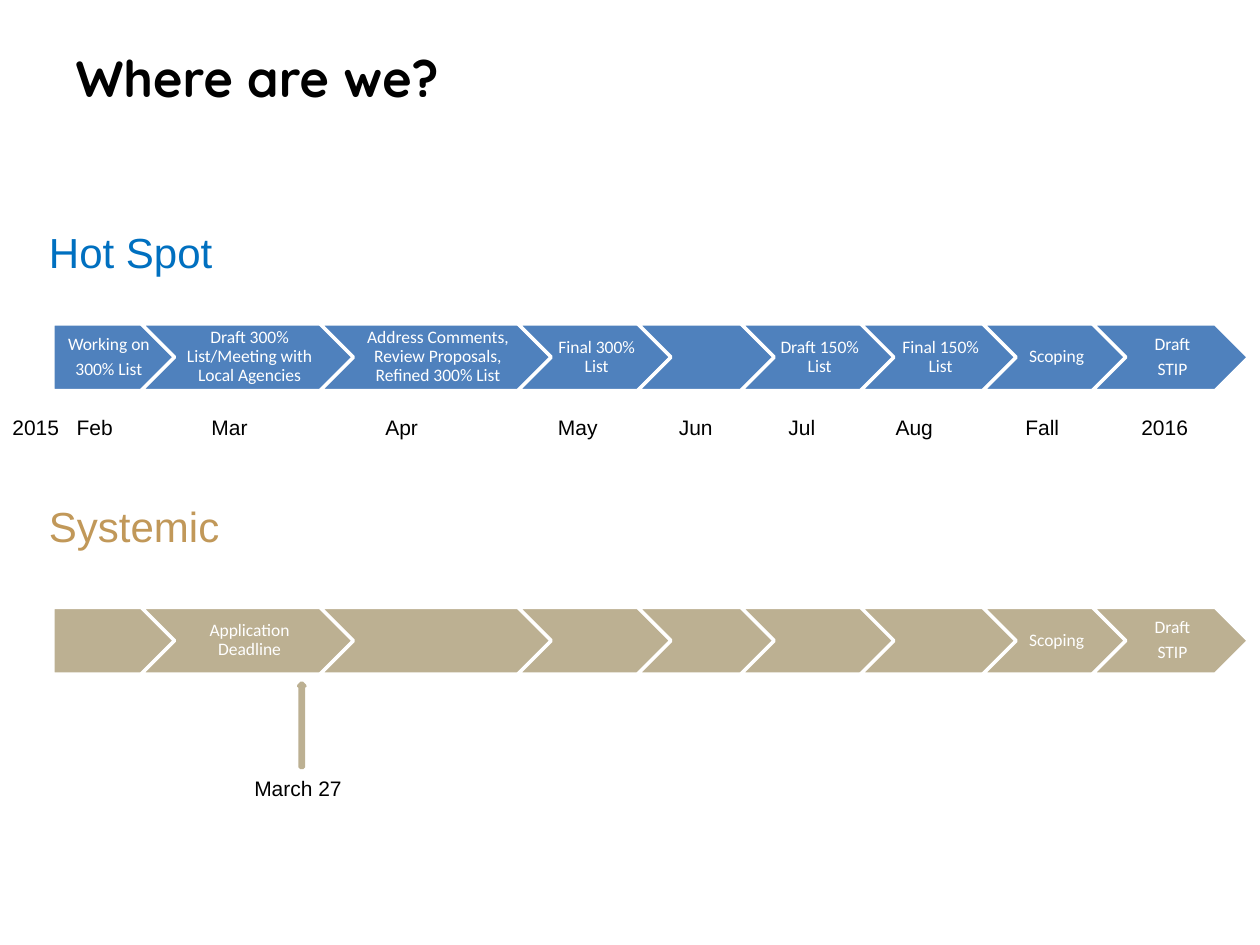
"""Build a project timeline slide with one chevron row per programme."""
from lxml import etree
from pptx import Presentation
from pptx import util as u
from pptx.dml import color
from pptx.enum import shapes, text
from pptx.oxml import ns

TITLE = "Where are we?"
PROGRAMMES = [
    {"name": "Hot Spot", "heading": "0070C0", "fill": "4F81BD", "heading_top": 1.75, "top": 2.57,
     "steps": ["Working on\n300% List", "Draft 300% List/Meeting with Local Agencies",
               "Address Comments, Review Proposals, Refined 300% List", "Final 300% List", "",
               "Draft 150% List", "Final 150% List", "Scoping", "Draft\nSTIP"]},
    {"name": "Systemic", "heading": "C19859", "fill": "BCB092", "heading_top": 3.92, "top": 4.82,
     "steps": ["", "Application Deadline", "", "", "", "", "", "Scoping", "Draft\nSTIP"]},
]
START_YEAR = "2015"
MONTHS = ["Feb", "Mar", "Apr", "May", "Jun", "Jul", "Aug", "Fall", "2016"]
MONTH_TABS = [1.07, 2.45, 3.82, 4.78, 5.65, 6.5, 7.53, 8.45]
DEADLINE = "March 27"

STEP_WIDTHS = [0.97, 1.69, 1.84, 1.22, 1.09, 1.22, 1.24, 1.14, 1.24]
ROW_LEFT, STEP_HEIGHT, OVERLAP = 0.42, 0.53, 0.27
MONTH_TOP = 3.24

THEME = {
    "title": ("Quicksand", 29, "000000"),
    "heading": ("Arial", 24),
    "label": ("Arial", 12, "000000"),
    "step": ("Calibri", 10, "FFFFFF"),
    "outline": "FFFFFF",
    "marker": "BCB092",
    "line": 2,
}


def style_font(font, name, size, rgb):
    font.name, font.size = name, u.Pt(size)
    font.color.rgb = color.RGBColor.from_string(rgb)


def add_label(slide, content, left, top, width, height, style, tabs=()):
    frame = slide.shapes.add_textbox(*map(u.Inches, (left, top, width, height))).text_frame
    frame.word_wrap = True
    frame.text = content
    paragraph = frame.paragraphs[0]
    if tabs:
        tab_list = etree.SubElement(paragraph._p.get_or_add_pPr(), ns.qn("a:tabLst"))
        for position in tabs:
            etree.SubElement(tab_list, ns.qn("a:tab"), pos=str(u.Inches(position)), algn="l")
    for run in paragraph.runs:
        style_font(run.font, *style)


def add_block(parent, kind, left, top, width, height, fill, outline):
    shape = parent.shapes.add_shape(kind, *map(u.Inches, (left, top, width, height)))
    shape.shadow.inherit = False
    shape.fill.solid()
    shape.fill.fore_color.rgb = color.RGBColor.from_string(fill)
    shape.line.color.rgb = color.RGBColor.from_string(outline)
    shape.line.width = u.Pt(THEME["line"])
    return shape


def write_step(shape, content, left_inset):
    frame = shape.text_frame
    frame.word_wrap = True
    frame.vertical_anchor = text.MSO_ANCHOR.MIDDLE
    frame.margin_left, frame.margin_right = u.Inches(left_inset), u.Inches(0.01)
    frame.margin_top = frame.margin_bottom = u.Inches(0.03)
    frame.text = content
    for paragraph in frame.paragraphs:
        paragraph.alignment = text.PP_ALIGN.CENTER
        paragraph.line_spacing, paragraph.space_after = 0.9, u.Pt(3.5)
        for run in paragraph.runs:
            style_font(run.font, *THEME["step"])


def add_programme(slide, programme):
    add_label(slide, programme["name"], 0.29, programme["heading_top"], 2.62, 0.5,
              (*THEME["heading"], programme["heading"]))
    row = slide.shapes.add_group_shape()
    left = ROW_LEFT
    for index, (content, width) in enumerate(zip(programme["steps"], STEP_WIDTHS)):
        kind = shapes.MSO_SHAPE.CHEVRON if index else shapes.MSO_SHAPE.PENTAGON
        step = add_block(row, kind, left, programme["top"], width, STEP_HEIGHT,
                         programme["fill"], THEME["outline"])
        if content:
            write_step(step, content, 0.04 if index else 0.06)
        left += width - OVERLAP


def add_title(slide):
    title = slide.shapes.title
    title.left, title.top, title.width, title.height = map(u.Inches, (0.5, 0.3, 9, 0.62))
    title.text_frame.text = TITLE
    title.text_frame.vertical_anchor = text.MSO_ANCHOR.MIDDLE
    paragraph = title.text_frame.paragraphs[0]
    paragraph.alignment = text.PP_ALIGN.LEFT
    font = paragraph.runs[0].font
    style_font(font, *THEME["title"])
    font.bold = True


def main():
    presentation = Presentation()
    presentation.slide_width, presentation.slide_height = u.Inches(10), u.Inches(7.5)
    slide = presentation.slides.add_slide(presentation.slide_layouts[5])
    add_title(slide)
    for programme in PROGRAMMES:
        add_programme(slide, programme)
    add_label(slide, START_YEAR, 0, MONTH_TOP, 0.58, 0.3, THEME["label"])
    add_label(slide, "\t".join(MONTHS), 0.51, MONTH_TOP, 9.16, 0.3, THEME["label"], MONTH_TABS)
    add_block(slide, shapes.MSO_SHAPE.UP_ARROW, 2.37, 5.42, 0.05, 0.67,
              THEME["marker"], THEME["marker"])
    add_label(slide, DEADLINE, 1.92, 6.11, 1, 0.3, THEME["label"])
    presentation.save("out.pptx")


if __name__ == "__main__":
    main()
